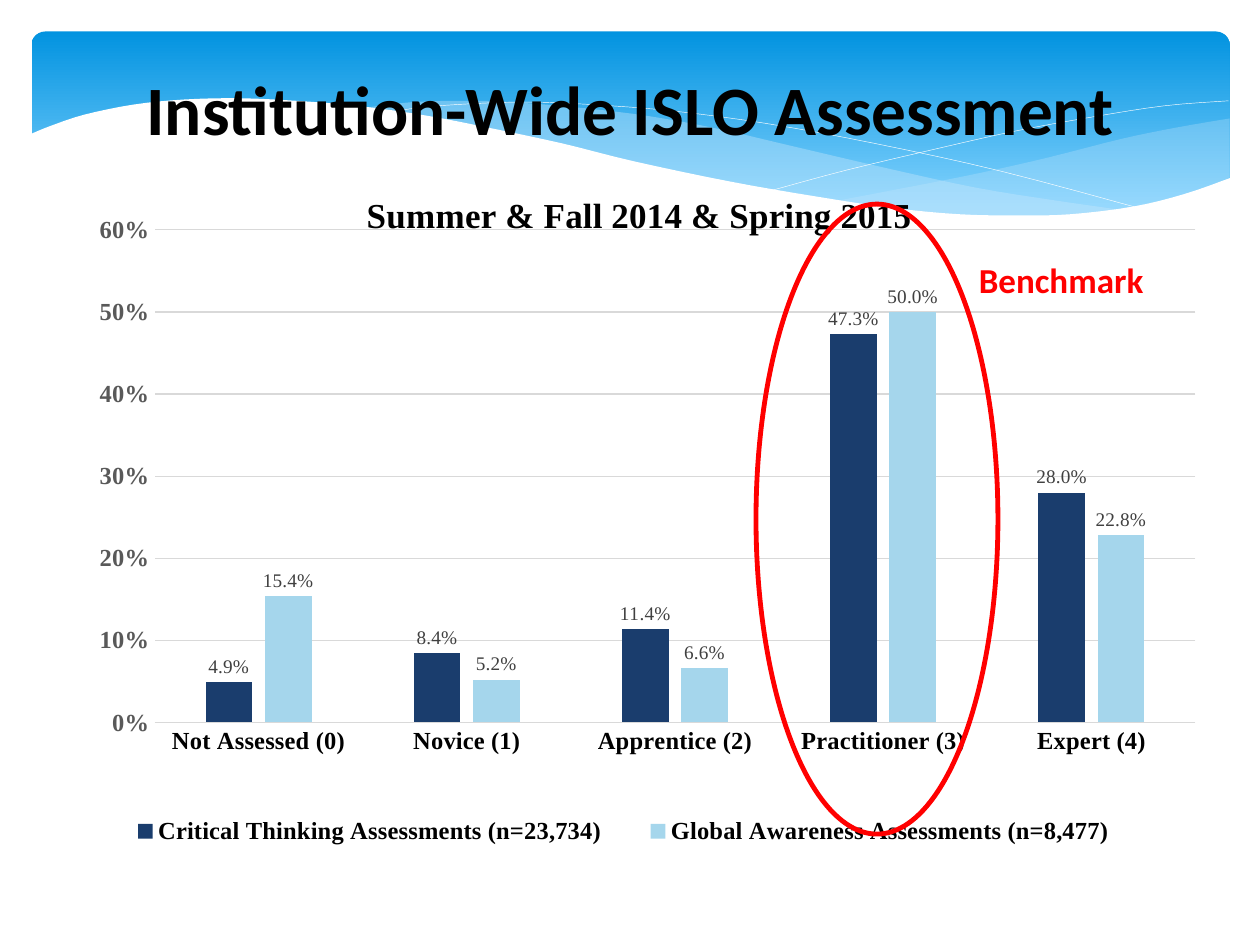
from lxml import etree
from pptx import Presentation
from pptx.chart.data import CategoryChartData
from pptx.dml.color import RGBColor
from pptx.enum.chart import XL_CHART_TYPE as ChartType, XL_LABEL_POSITION as LabelPos
from pptx.enum.chart import XL_LEGEND_POSITION as LegendPos, XL_TICK_MARK as Tick
from pptx.enum.shapes import MSO_SHAPE as Shape
from pptx.enum.text import MSO_ANCHOR as Anchor, PP_ALIGN as Align
from pptx.oxml import parse_xml
from pptx.oxml.ns import nsdecls, qn
from pptx.util import Inches, Pt

SERIF = "Times New Roman"


def style_font(font, name, size, color, bold=False):
    font.name, font.size, font.bold = name, Pt(size), bold
    font.color.rgb = RGBColor.from_string(color)


def add_text(text, left, top, width, height, name="Calibri", size=20,
             color="000000", bold=True, align=Align.LEFT):
    box = slide.shapes.add_textbox(Inches(left), Inches(top), Inches(width), Inches(height))
    box.text_frame.word_wrap = True
    box.text_frame.vertical_anchor = Anchor.TOP
    line = box.text_frame.paragraphs[0]
    line.alignment = align
    run = line.add_run()
    run.text = text
    style_font(run.font, name, size, color, bold)


prs = Presentation()
prs.slide_width, prs.slide_height = Inches(10), Inches(7.5)
slide = prs.slides.add_slide(prs.slide_layouts[6])

# Blue banner
banner = slide.shapes.add_shape(Shape.ROUNDED_RECTANGLE, Inches(0.25), Inches(0.25),
                                Inches(9.51), Inches(1.56))
banner.adjustments[0] = 0.07
banner.shadow.inherit = False
banner.line.fill.background()
banner.fill.gradient()
banner.fill.gradient_angle = 270
for stop, color, position in zip(banner.fill.gradient_stops, ("0293E0", "83D3FE"), (0, 0.9)):
    stop.color.rgb = RGBColor.from_string(color)
    stop.position = position

# Waves: (fill, opacity in %, smooth edges joined by straight lines)
waves = [
    ("C6E7FC", 29, [
        [(9.76, 0.94), (9.35, 1.01), (8.91, 1.1), (8.32, 1.25), (7.79, 1.37), (7.29, 1.47),
         (6.61, 1.6)],
        [(6.61, 1.6), (7.05, 1.65), (7.57, 1.7), (8.14, 1.72), (8.63, 1.7), (9.05, 1.63),
         (9.42, 1.54), (9.76, 1.41)]]),
    ("C6E7FC", 40, [
        [(8.93, 1.67), (8.37, 1.59), (7.75, 1.49), (7.06, 1.34), (6.29, 1.16), (5.69, 1.02),
         (5.14, 0.92), (4.65, 0.86), (4.2, 0.82), (3.8, 0.8), (3.28, 0.81), (2.86, 0.86)],
        [(2.86, 0.86), (3.42, 0.94), (4.04, 1.06), (4.91, 1.26), (5.66, 1.43), (6.34, 1.56),
         (6.95, 1.65), (7.48, 1.7), (7.96, 1.73), (8.48, 1.72), (8.93, 1.67)]]),
    (None, 100, [
        [(3.09, 0.9), (3.28, 0.86), (3.63, 0.83), (4.16, 0.81), (4.69, 0.83), (5.33, 0.88),
         (6.08, 0.98), (6.95, 1.14), (7.95, 1.36), (9.07, 1.66)]]),
    (None, 100, [
        [(6.13, 1.51), (6.72, 1.35), (7.48, 1.17), (8.06, 1.04), (8.66, 0.93), (9.24, 0.84),
         (9.75, 0.8)]]),
    ("FFFFFF", 100, [
        [(9.77, 1.41), (9.4, 1.54), (8.99, 1.64), (8.5, 1.7), (8.09, 1.71), (7.61, 1.7),
         (7.08, 1.65), (6.48, 1.56), (5.79, 1.44), (5.03, 1.28), (4.47, 1.14), (3.91, 1.02),
         (3.4, 0.92), (2.92, 0.85), (2.5, 0.81), (1.93, 0.78), (1.46, 0.79), (1.06, 0.83),
         (0.67, 0.91), (0.4, 1), (0.23, 1.07)],
        [(0.23, 2.24), (9.77, 2.24)]]),
]
for color, opacity, edges in waves:
    outline = []
    for edge in edges:
        # Catmull-Rom curve through the points of the edge
        padded = [edge[0]] + edge + [edge[-1]]
        for a, b, c, d in zip(padded, padded[1:], padded[2:], padded[3:]):
            for t in (0, 0.25, 0.5, 0.75):
                outline.append([
                    Inches(q + t / 2 * (r - p + t * (2 * p - 5 * q + 4 * r - s
                                                    + t * (3 * q - p - 3 * r + s))))
                    for p, q, r, s in zip(a, b, c, d)])
        outline.append([Inches(v) for v in edge[-1]])
    builder = slide.shapes.build_freeform(*outline[0])
    builder.add_line_segments(outline[1:], close=color is not None)
    wave = builder.convert_to_shape()
    wave.shadow.inherit = False
    if color:
        wave.line.fill.background()
        wave.fill.solid()
        wave.fill.fore_color.rgb = RGBColor.from_string(color)
        tint = wave.fill._xPr.find(".//" + qn("a:srgbClr"))
        etree.SubElement(tint, qn("a:alpha"), val=str(opacity * 1000))
    else:
        wave.fill.background()
        wave.line.color.rgb = RGBColor.from_string("FFFFFF")
        wave.line.width = Pt(0.25)

add_text("Institution-Wide ISLO Assessment", 0.67, 0.48, 8.67, 1.37,
         size=39.6, align=Align.CENTER)

# Assessment chart
scores = CategoryChartData(number_format="0.0%")
scores.categories = ["Not Assessed (0)", "Novice (1)", "Apprentice (2)",
                     "Practitioner (3)", "Expert (4)"]
scores.add_series("Critical Thinking Assessments (n=23,734)", (0.049, 0.084, 0.114, 0.473, 0.28))
scores.add_series("Global Awareness Assessments (n=8,477)", (0.154, 0.052, 0.066, 0.5, 0.228))
chart = slide.shapes.add_chart(ChartType.COLUMN_CLUSTERED, Inches(0.5), Inches(1.25),
                               Inches(9.08), Inches(5.75), scores).chart
style_font(chart.font, "Calibri", 10, "000000")

chart.has_title = True
chart.chart_title.include_in_layout = False
period = chart.chart_title.text_frame.paragraphs[0].add_run()
period.text = "Summer & Fall 2014 & Spring 2015"
style_font(period.font, SERIF, 20, "000000", True)

chart.has_legend = True
chart.legend.position = LegendPos.BOTTOM
chart.legend.include_in_layout = False
style_font(chart.legend.font, SERIF, 14, "000000", True)

levels, shares = chart.category_axis, chart.value_axis
for axis, color in ((levels, "000000"), (shares, "595959")):
    style_font(axis.tick_labels.font, SERIF, 14, color, True)
    axis.major_tick_mark = axis.minor_tick_mark = Tick.NONE
shares.minimum_scale, shares.maximum_scale, shares.major_unit = 0, 0.6, 0.1
shares.tick_labels.number_format = "0%"
shares.tick_labels.number_format_is_linked = False
shares.format.line.fill.background()
for rule in (levels.format.line, shares.major_gridlines.format.line):
    rule.color.rgb = RGBColor.from_string("D9D9D9")
    rule.width = Pt(0.75)

plot = chart.plots[0]
plot.gap_width, plot.overlap, plot.vary_by_categories = 219, -27, False
for series, color in zip(plot.series, ("1A3D6D", "A5D6EC")):
    series.format.fill.solid()
    series.format.fill.fore_color.rgb = RGBColor.from_string(color)
    labels = series.data_labels
    labels.show_value = True
    labels.number_format, labels.number_format_is_linked = "0.0%", False
    labels.position = LabelPos.OUTSIDE_END
    style_font(labels.font, SERIF, 11, "404040")

# Fixed places of title, legend and plot, as shares of the chart
chart_root = chart._chartSpace.chart
for part, after, target, place in (
        ("c:title", "c:tx", "", {"x": 0.26, "y": 0.04}),
        ("c:legend", "c:legendPos", "", {"x": 0.03, "y": 0.9, "w": 0.92, "h": 0.06}),
        ("c:plotArea", None, "inner", {"x": 0.08, "y": 0.1, "w": 0.91, "h": 0.68})):
    holder = chart_root.find(qn(part))
    for old in holder.findall(qn("c:layout")):
        holder.remove(old)
    layout = parse_xml(f"<c:layout {nsdecls('c')}><c:manualLayout/></c:layout>")
    if target:
        etree.SubElement(layout[0], qn("c:layoutTarget"), val=target)
    for key in "xy":
        etree.SubElement(layout[0], qn(f"c:{key}Mode"), val="edge")
    for key, value in place.items():
        etree.SubElement(layout[0], qn(f"c:{key}"), val=str(value))
    holder.insert(0 if after is None else holder.index(holder.find(qn(after))) + 1, layout)

# Benchmark highlight
ring = slide.shapes.add_shape(Shape.OVAL, Inches(6), Inches(1.62), Inches(1.92), Inches(5))
ring.shadow.inherit = False
ring.fill.background()
ring.line.color.rgb = RGBColor.from_string("FF0000")
ring.line.width = Pt(2.75)
add_text("Benchmark", 7.67, 2, 1.83, 0.44, color="FF0000")

prs.save("out.pptx")
